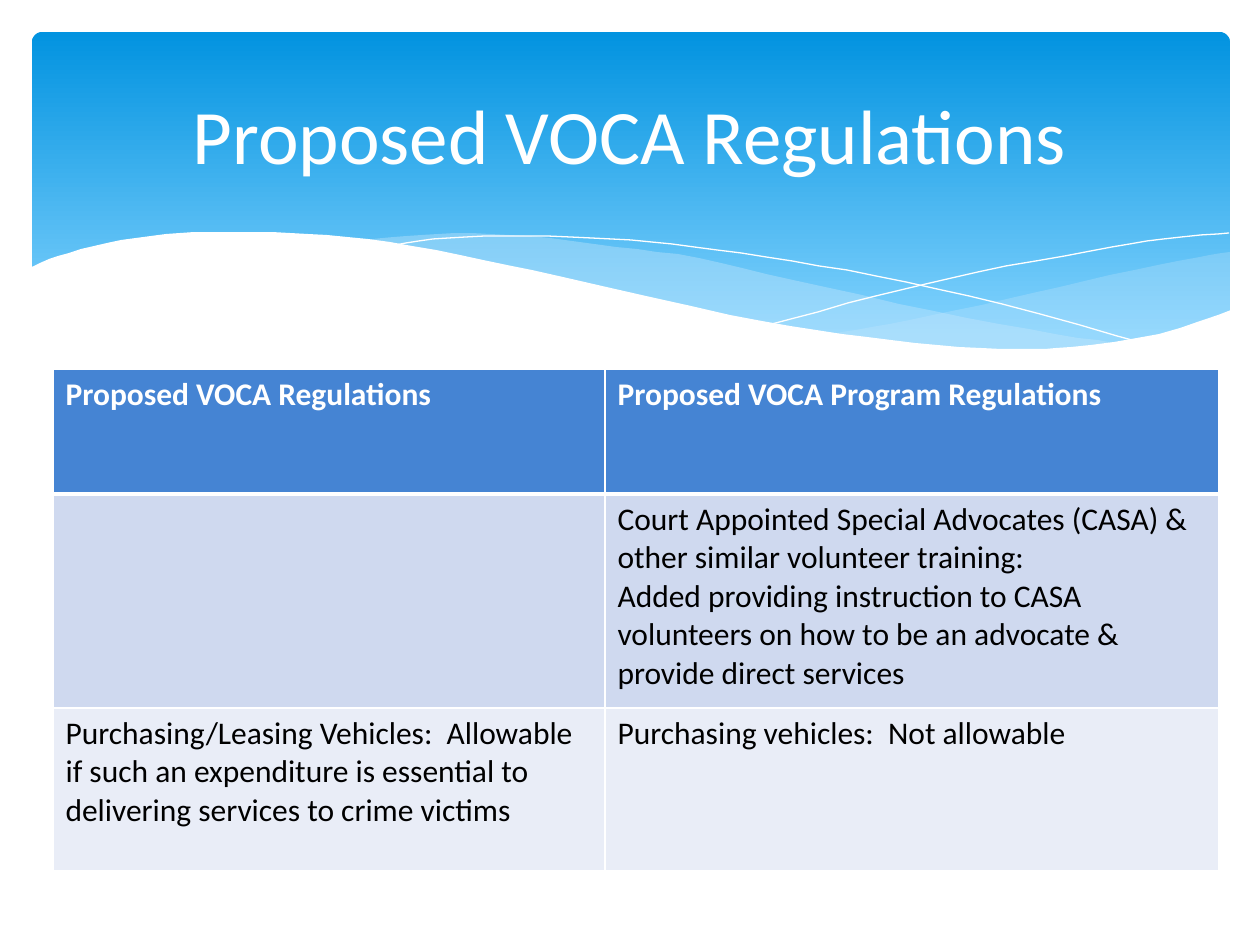
from lxml.etree import SubElement
from pptx import Presentation
from pptx.dml.color import RGBColor
from pptx.enum.shapes import MSO_SHAPE
from pptx.enum.text import MSO_ANCHOR, PP_ALIGN
from pptx.oxml.ns import qn
from pptx.util import Emu, Pt

SCALE = 914400 / 126
FONT = "Calibri"
COLORS = {
    "white": "FFFFFF",
    "black": "000000",
    "band_top": "0293E0",
    "band_bottom": "83D3FE",
    "swell": "C6E7FC",
    "header": "4584D3",
    "odd_row": "CFD9EF",
    "even_row": "E9EDF7",
}

RIGHT_SWELL = [
    [(1230, 252), (1178, 261), (1085, 281), (982, 305), (890, 324), (833, 334)],
    [(833, 334), (906, 343), (969, 349), (1026, 350), (1087, 347), (1150, 336),
     (1196, 324), (1230, 311)],
]
LONG_SWELL = [
    [(1125, 344), (1055, 334), (934, 311), (793, 280), (699, 258), (616, 247),
     (529, 236), (455, 233), (394, 237), (360, 241)],
    [(360, 241), (456, 256), (566, 280), (713, 312), (819, 333), (910, 345),
     (989, 350), (1056, 350), (1125, 344)],
]
FALLING_LINE = [(389, 246), (433, 239), (505, 236), (591, 238), (672, 244),
                (766, 257), (876, 276), (1002, 304), (1143, 343)]
RISING_LINE = [(772, 324), (876, 296), (978, 272), (1091, 251), (1164, 239),
               (1229, 233)]
WHITE_WAVE = [
    [(1231, 310), (1159, 334), (1071, 347), (1019, 349), (937, 345), (842, 334),
     (730, 315), (563, 277), (460, 255), (368, 239), (290, 233), (223, 232),
     (166, 234), (107, 243), (58, 256), (29, 268)],
    [(29, 415), (1231, 415)],
]

ROWS = [
    [["Proposed VOCA Regulations"], ["Proposed VOCA Program Regulations"]],
    [[], ["Court Appointed Special Advocates (CASA) & other similar volunteer training:",
          "Added providing instruction to CASA volunteers on how to be an advocate "
          "& provide direct services"]],
    [["Purchasing/Leasing Vehicles:  Allowable if such an expenditure is essential to "
      "delivering services to crime victims"],
     ["Purchasing vehicles:  Not allowable"]],
]
ROW_FILLS = ["header", "odd_row", "even_row"]
COLUMN_WIDTHS = [552, 614]
ROW_HEIGHTS = [125, 214, 163]


def px(length):
    return Emu(round(length * SCALE))


def rgb(name):
    return RGBColor.from_string(COLORS[name])


def smooth_curve(knots, steps=4):
    if len(knots) < 3:
        return knots
    padded = [knots[0], *knots, knots[-1]]
    points = [knots[0]]
    for a, b, c, d in zip(padded, padded[1:], padded[2:], padded[3:]):
        for step in range(1, steps + 1):
            t = step / steps
            points.append(tuple(
                (2 * q + (r - p) * t + (2 * p - 5 * q + 4 * r - s) * t ** 2
                 + (3 * q - p - 3 * r + s) * t ** 3) / 2
                for p, q, r, s in zip(a, b, c, d)))
    return points


def add_outline(page, edges, closed):
    points = [point for edge in edges for point in smooth_curve(edge)]
    builder = page.shapes.build_freeform(*points[0], scale=SCALE)
    builder.add_line_segments(points[1:], close=closed)
    shape = builder.convert_to_shape()
    shape.shadow.inherit = False
    return shape


def add_wave(page, edges, color, opacity=100):
    wave = add_outline(page, edges, True)
    wave.fill.solid()
    wave.fill.fore_color.rgb = rgb(color)
    wave.line.fill.background()
    if opacity < 100:
        tint = wave.fill._xPr.find(".//" + qn("a:srgbClr"))
        SubElement(tint, qn("a:alpha"), val=str(opacity * 1000))


def add_curve(page, knots):
    curve = add_outline(page, [knots], False)
    curve.fill.background()
    curve.line.color.rgb = rgb("white")
    curve.line.width = Pt(0)


def add_band(page):
    band = page.shapes.add_shape(
        MSO_SHAPE.ROUNDED_RECTANGLE, px(32), px(32), px(1198), px(340))
    band.adjustments[0] = 0.03
    band.shadow.inherit = False
    band.line.fill.background()
    band.fill.gradient()
    band.fill.gradient_angle = 270
    stops = [("band_top", 0), ("band_bottom", 0.9)]
    for stop, (color, position) in zip(band.fill.gradient_stops, stops):
        stop.color.rgb = rgb(color)
        stop.position = position


def write_span(para, text, color, **formats):
    span = para.add_run()
    span.text = text
    span.font.color.rgb = rgb(color)
    for name, value in {"name": FONT, **formats}.items():
        setattr(span.font, name, value)


def add_title(page, text):
    box = page.shapes.add_textbox(px(63), px(47), px(1134), px(173))
    frame = box.text_frame
    frame.word_wrap = True
    frame.vertical_anchor = MSO_ANCHOR.MIDDLE
    para = frame.paragraphs[0]
    para.alignment = PP_ALIGN.CENTER
    write_span(para, text, "white", size=Pt(44))


def set_borders(cell, widths):
    properties = cell._tc.get_or_add_tcPr()
    for side, width in widths.items():
        border = SubElement(properties, qn(f"a:ln{side}"), w=str(Pt(width)))
        fill = SubElement(border, qn("a:solidFill"))
        SubElement(fill, qn("a:srgbClr"), val=COLORS["white"])


def fill_cell(cell, lines, color, is_header, is_below_header):
    set_borders(cell, {"L": 1, "R": 1, "T": 3 if is_below_header else 1,
                       "B": 3 if is_header else 1})
    cell.fill.solid()
    cell.fill.fore_color.rgb = rgb(color)
    frame = cell.text_frame
    for index, line in enumerate(lines):
        para = frame.add_paragraph() if index else frame.paragraphs[0]
        write_span(para, line, "white" if is_header else "black",
                   size=Pt(18), bold=is_header)


def add_regulations_table(page):
    table = page.shapes.add_table(
        len(ROWS), len(COLUMN_WIDTHS), px(53), px(369),
        px(sum(COLUMN_WIDTHS)), px(sum(ROW_HEIGHTS))).table
    for column, width in zip(table.columns, COLUMN_WIDTHS):
        column.width = px(width)
    for row, height in zip(table.rows, ROW_HEIGHTS):
        row.height = px(height)
    for r, (row, color) in enumerate(zip(ROWS, ROW_FILLS)):
        for c, lines in enumerate(row):
            fill_cell(table.cell(r, c), lines, color, r == 0, r == 1)


def main():
    deck = Presentation()
    deck.slide_width, deck.slide_height = px(1260), px(945)
    page = deck.slides.add_slide(deck.slide_layouts[6])
    add_band(page)
    add_wave(page, RIGHT_SWELL, "swell", 29)
    add_wave(page, LONG_SWELL, "swell", 40)
    add_curve(page, FALLING_LINE)
    add_curve(page, RISING_LINE)
    add_wave(page, WHITE_WAVE, "white")
    add_regulations_table(page)
    add_title(page, "Proposed VOCA Regulations")
    deck.save("out.pptx")


if __name__ == "__main__":
    main()
